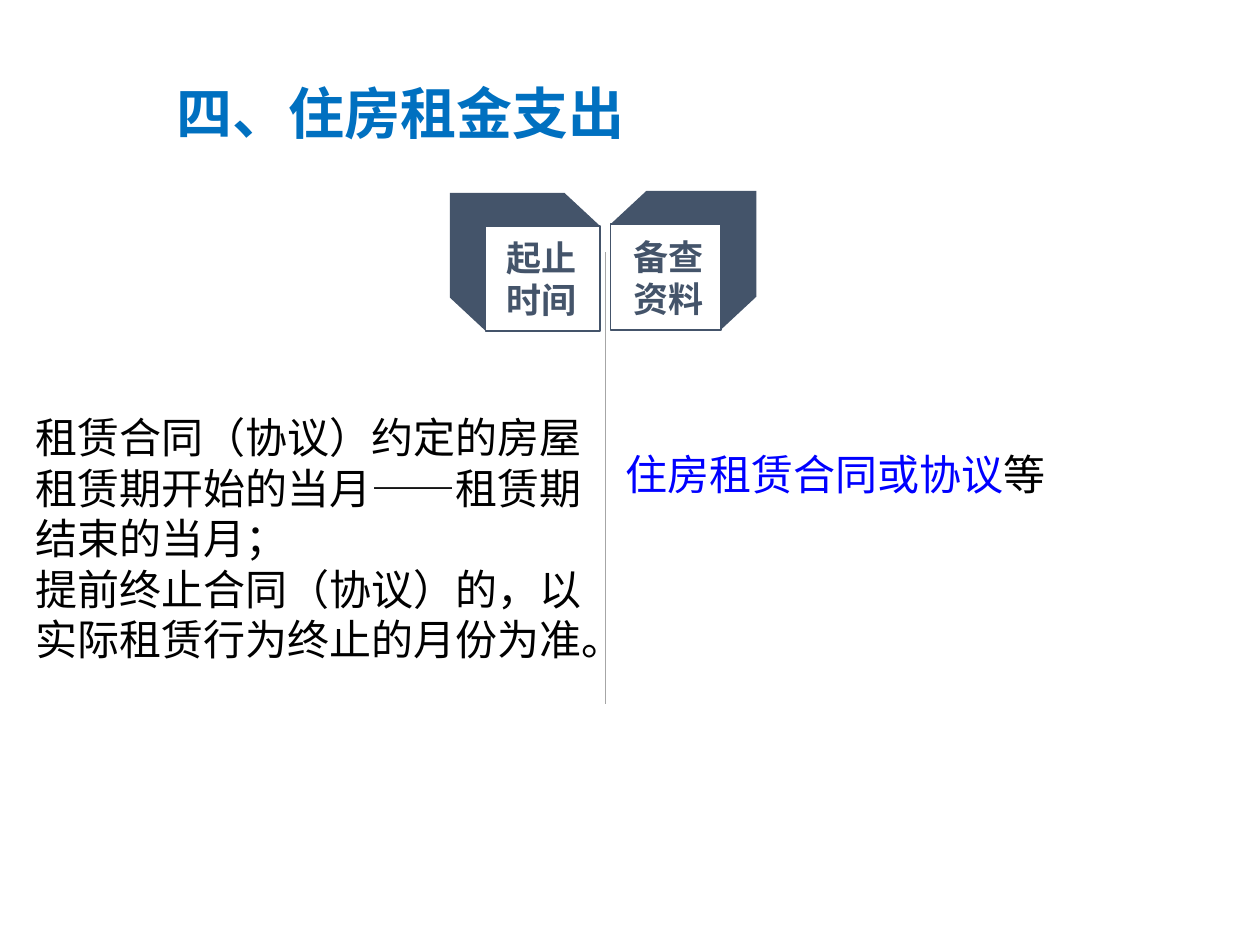
from dataclasses import dataclass

from lxml import etree
from pptx import Presentation
from pptx.dml.color import RGBColor
from pptx.enum.shapes import MSO_CONNECTOR, MSO_SHAPE
from pptx.enum.text import MSO_ANCHOR, MSO_AUTO_SIZE, PP_ALIGN
from pptx.oxml.ns import qn
from pptx.util import Cm, Pt

STRAIGHT = MSO_CONNECTOR.STRAIGHT
RECTANGLE = MSO_SHAPE.RECTANGLE
ROUNDED = MSO_SHAPE.ROUNDED_RECTANGLE
MIDDLE = MSO_ANCHOR.MIDDLE
GROW = MSO_AUTO_SIZE.SHAPE_TO_FIT_TEXT
LEFT = PP_ALIGN.LEFT


@dataclass(frozen=True)
class Theme:
    slate: RGBColor = RGBColor(0x44, 0x54, 0x6A)
    white: RGBColor = RGBColor(0xFF, 0xFF, 0xFF)
    black: RGBColor = RGBColor(0, 0, 0)
    title: RGBColor = RGBColor(0x00, 0x70, 0xC0)
    accent: RGBColor = RGBColor(0, 0, 0xFF)
    divider: RGBColor = RGBColor(0xA6, 0xA6, 0xA6)
    title_size: Pt = Pt(32)
    label_size: Pt = Pt(20)
    body_size: Pt = Pt(24)
    latin: str = "Arial"
    cjk: str = "Noto Sans CJK SC"


THEME = Theme()


def style_run(run, size, color, font, bold=False):
    run.font.size = size
    run.font.bold = bold
    run.font.color.rgb = color
    run.font.name = font
    east_asian = etree.SubElement(run.font._element, qn("a:ea"))
    east_asian.set("typeface", THEME.cjk)


def add_text(slide, box, paragraphs, size, font, bold=False, wrap=True):
    """Each paragraph is a list of (wording, color) pairs."""
    frame = slide.shapes.add_textbox(*map(Cm, box)).text_frame
    frame.word_wrap = wrap
    frame.auto_size = GROW
    for index, parts in enumerate(paragraphs):
        paragraph = frame.paragraphs[0] if index == 0 else frame.add_paragraph()
        for wording, color in parts:
            run = paragraph.add_run()
            run.text = wording
            style_run(run, size, color, font, bold)


def add_title(slide, box, wording):
    title = slide.shapes.add_shape(ROUNDED, *map(Cm, box))
    title.adjustments[0] = 0
    title.shadow.inherit = False
    title.fill.background()
    title.line.fill.background()
    frame = title.text_frame
    frame.text = wording
    frame.word_wrap = True
    frame.vertical_anchor = MIDDLE
    heading = frame.paragraphs[0]
    heading.alignment = LEFT
    heading.line_spacing = 1.5
    style_run(heading.runs[0], THEME.title_size, THEME.title, THEME.cjk, True)


def add_divider(slide, x, top, bottom):
    divider = slide.shapes.add_connector(STRAIGHT, Cm(x), Cm(top), Cm(x), Cm(bottom))
    divider.line.color.rgb = THEME.divider
    divider.line.width = Pt(0.5)
    etree.SubElement(divider._element.spPr, qn("a:effectLst"))


def add_fold(slide, outline):
    points = [(Cm(x), Cm(y)) for x, y in outline]
    builder = slide.shapes.build_freeform(*points[0])
    builder.add_line_segments(points[1:], close=True)
    fold = builder.convert_to_shape()
    fold.shadow.inherit = False
    fold.fill.solid()
    fold.fill.fore_color.rgb = THEME.slate
    fold.line.fill.background()


def add_tab(slide, face, outer_x, cut_x, fold_top, label_box, lines):
    """A white face with a folded dark band on its outer side."""
    left, top, width, height = face
    right, bottom = left + width, top + height
    near, far = (left, right) if outer_x < left else (right, left)
    add_fold(slide, [(outer_x, fold_top), (outer_x, bottom - (top - fold_top)),
                     (near, bottom), (near, top), (far, top), (cut_x, fold_top)])
    panel = slide.shapes.add_shape(RECTANGLE, *map(Cm, face))
    panel.shadow.inherit = False
    panel.fill.solid()
    panel.fill.fore_color.rgb = THEME.white
    panel.line.color.rgb = THEME.slate
    panel.line.width = Pt(1)
    add_text(slide, label_box, [[(line, THEME.slate)] for line in lines],
             THEME.label_size, THEME.cjk, bold=True, wrap=False)


def main():
    prs = Presentation()
    prs.slide_width, prs.slide_height = Cm(25.4), Cm(19.05)
    slide = prs.slides.add_slide(prs.slide_layouts[6])

    # Divider between the two columns
    add_divider(slide, 12.2, 5.08, 14.2)

    # Column headings
    add_tab(slide, (9.79, 4.56, 2.31, 2.11), 9.07, 11.38, 3.89,
            (9.96, 4.65, 1.93, 1.96), ["起止", "时间"])
    add_tab(slide, (12.31, 4.52, 2.22, 2.13), 15.25, 13.03, 3.85,
            (12.52, 4.62, 1.93, 1.96), ["备查", "资料"])

    # Column contents
    period = ["租赁合同（协议）约定的房屋租赁期开始的当月——租赁期结束的当月；",
              "提前终止合同（协议）的，以实际租赁行为终止的月份为准。"]
    add_text(slide, (0.46, 8.18, 11.63, 6.4), [[(line, THEME.black)] for line in period],
             THEME.body_size, THEME.latin)
    add_text(slide, (12.37, 8.92, 12.19, 1.27),
             [[("住房租赁合同或协议", THEME.accent), ("等", THEME.black)]],
             THEME.body_size, THEME.latin)

    # Title
    add_title(slide, (3.3, 1.14, 19.91, 1.55), "四、住房租金支出")

    prs.save("out.pptx")


if __name__ == "__main__":
    main()
